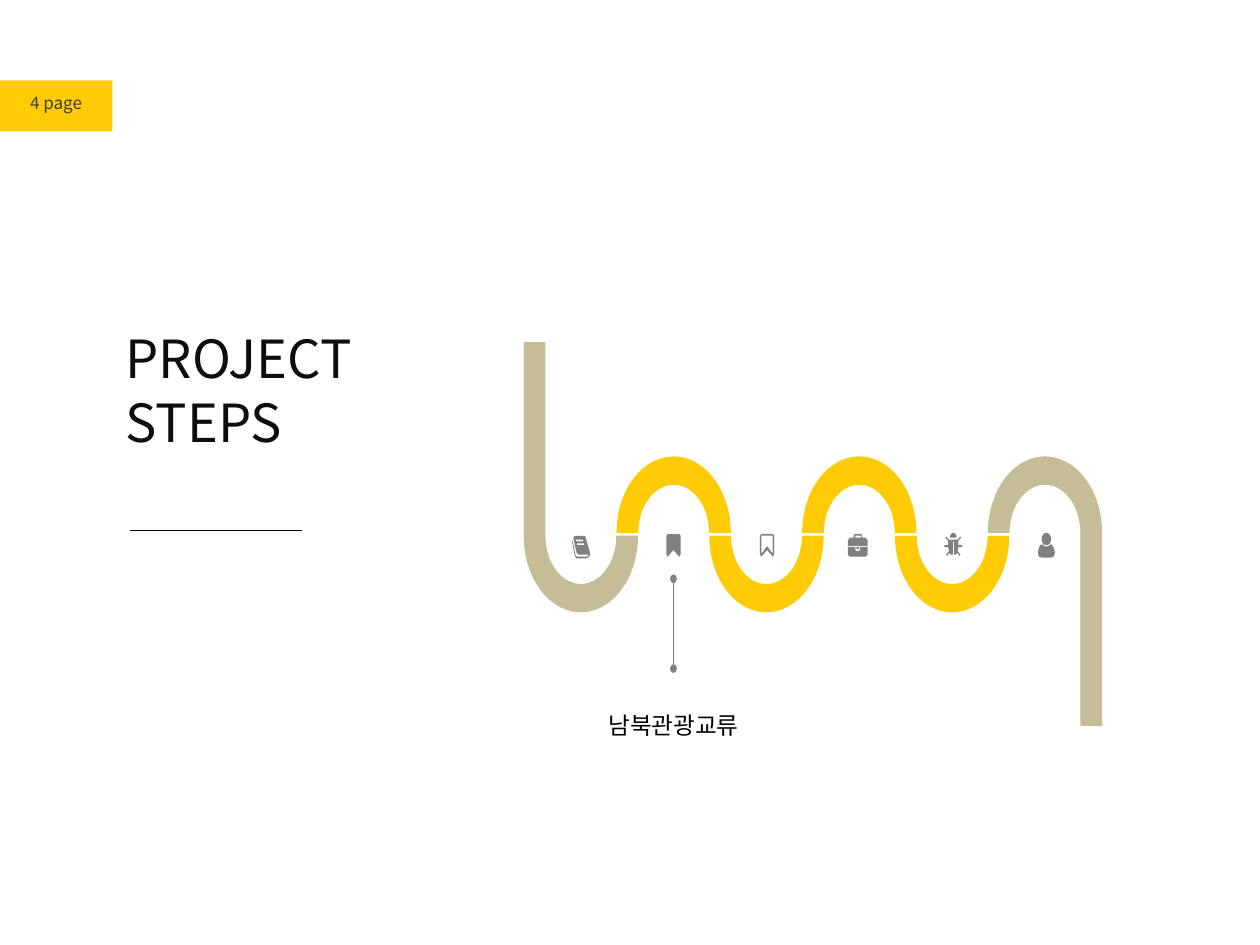
import math
from lxml import etree
from pptx import Presentation
from pptx import util as u
from pptx.dml.color import RGBColor
from pptx.enum import shapes, text
from pptx.oxml.ns import qn

hues = {"gold": "FFCB05", "sand": "C4BD97", "gray": "808080",
        "dark": "404040", "ink": "0D0D0D", "black": "000000"}
rgb = {name: RGBColor.from_string(code) for name, code in hues.items()}
cell = u.Inches(0.01)
cols, rows = 1333, 1000
noto = "Noto Sans CJK KR"

deck = Presentation()
deck.slide_width, deck.slide_height = cols * cell, rows * cell
slide = deck.slides.add_slide(deck.slide_layouts[5])
items = slide.shapes


def arc(x, y, wide, high, start, end):
    turns = [math.radians(start + (end - start) * n / 36) for n in range(37)]
    return [(x + wide * math.cos(t), y - high * math.sin(t)) for t in turns]


def draw(loops, hue, left=0, top=0):
    pen = None
    for loop in loops:
        spots = [((left + x) * 10, (top + y) * 10) for x, y in loop]
        if pen is None:
            pen = items.build_freeform(*spots[0], scale=cell / 10)
        else:
            pen.move_to(*spots[0])
        pen.add_line_segments(spots[1:], close=True)
    form = pen.convert_to_shape()
    form.shadow.inherit = False
    form.fill.solid()
    form.fill.fore_color.rgb = rgb[hue]
    form.line.fill.background()


for kind, hue, x, y, w, h in [
    (shapes.MSO_SHAPE.RECTANGLE, "gold", 0, 85, 119, 54),
    (shapes.MSO_SHAPE.OVAL, "gray", 709, 608, 7, 9),
    (shapes.MSO_SHAPE.OVAL, "gray", 709, 703, 7, 9),
]:
    form = items.add_shape(kind, x * cell, y * cell, w * cell, h * cell)
    form.shadow.inherit = False
    form.fill.solid()
    form.fill.fore_color.rgb = rgb[hue]
    form.line.fill.background()

first, pitch, count = 614.5, 98.2, 6
for n in range(count):
    mid = first + n * pitch
    base, end = (564, 180) if n % 2 else (567, -180)
    outer = arc(mid, base, 60.5, 81, 0, end)
    inner = arc(mid, base, 37.5, 51, end, 0)
    if n == 0:
        outer.append((outer[-1][0], 362))
        inner.insert(0, (inner[0][0], 362))
    if n == count - 1:
        outer.insert(0, (outer[0][0], 768))
        inner.append((inner[-1][0], 768))
    draw([outer + inner], "sand" if n in (0, count - 1) else "gold")

book = [
    [(0, 5), (3, 21), (5, 24), (16, 24), (19, 21), (19, 17), (14, 0), (3, 0),
     (1.5, 2), (5, 18), (7, 20), (18, 20), (16, 22), (5, 22), (4, 21), (1, 6)],
    [(5, 8), (13, 8), (13, 10), (6, 10)],
    [(4, 4), (12, 4), (12, 6), (5, 6)],
]
mark = [(0, 2), (1.5, 0), (13.5, 0), (15, 2), (15, 22), (13.5, 24),
        (7.5, 17), (1.5, 24), (0, 22)]
hole = [(1.5, 2), (13.5, 2), (13.5, 21), (7.5, 13), (1.5, 21)]
case = [
    [(0, 7), (2, 4), (6, 4), (6, 2), (7, 0), (14, 0), (15, 2), (15, 4),
     (19, 4), (21, 7), (21, 13), (0, 13)],
    [(8, 2), (14, 2), (14, 4), (8, 4)],
    [(0, 14), (8, 14), (8, 17), (9, 18), (12, 18), (13, 17), (13, 14),
     (21, 14), (21, 22), (19, 24), (2, 24), (0, 22)],
    [(9, 14), (12, 14), (12, 16), (9, 16)],
]
half = [(9.5, 7), (5, 7), (2, 4), (1, 5), (4, 8), (4, 13), (0, 13), (0, 15),
        (4, 15), (5, 19), (2, 23), (3, 24.5), (5, 21), (7, 23), (9, 23),
        (9, 9), (9.5, 9)]
bug = [half + [(19 - x, y) for x, y in reversed(half)],
       arc(9.5, 5, 3.5, 5, 0, 180)]
side = [(9, 14.5), (7, 14), (4.5, 12), (3, 12.5), (1, 16), (0, 21),
        (1, 25), (4, 26)]
user = [side + [(18 - x, y) for x, y in reversed(side)],
        arc(9, 6.5, 5, 6.5, 0, 360)]
for loops, x, y in [(book, 605, 567), ([mark], 705, 565),
                    ([mark, hole], 804, 565), (case, 897, 565),
                    (bug, 999, 564), (user, 1098, 564)]:
    draw(loops, "gray", x, y)

for x1, y1, x2, y2, hue in [(712.5, 613, 712.5, 706, "gray"),
                            (138, 561, 320, 561, "black")]:
    rule = items.add_connector(shapes.MSO_CONNECTOR.STRAIGHT,
                               *[int(v * cell) for v in (x1, y1, x2, y2)])
    rule.line.color.rgb = rgb[hue]
    rule.line.width = u.Pt(0.75)
    etree.SubElement(rule._element.spPr, qn("a:effectLst"))

title = items.title
title.left, title.top, title.width, title.height = [
    v * cell for v in (123, 339, 362, 145)]
page = items.add_textbox(22 * cell, 82 * cell, 81 * cell, 43 * cell)
label = items.add_textbox(633 * cell, 733 * cell, 159 * cell, 105 * cell)
left, center = text.PP_ALIGN.LEFT, text.PP_ALIGN.CENTER
for box, words, size, face, hue, align, gap in [
    (title, "PROJECT\nSTEPS", 40, noto, "ink", left, u.Pt(48.6)),
    (page, "4 page", 13, noto, "dark", left, u.Pt(23.7)),
    (label, "남북관광교류", 18, "Calibri", "black", center, 1.5),
]:
    frame = box.text_frame
    frame.text = words
    frame.word_wrap = True
    frame.auto_size = text.MSO_AUTO_SIZE.NONE
    frame.vertical_anchor = text.MSO_ANCHOR.TOP
    for para in frame.paragraphs:
        para.alignment = align
        para.line_spacing = gap
        para.space_before = u.Pt(0)
        para.font.size = u.Pt(size)
        para.font.name = face
        para.font.color.rgb = rgb[hue]
pad = label.text_frame
pad.margin_left = pad.margin_right = pad.margin_top = pad.margin_bottom = 4 * cell

deck.save("out.pptx")
